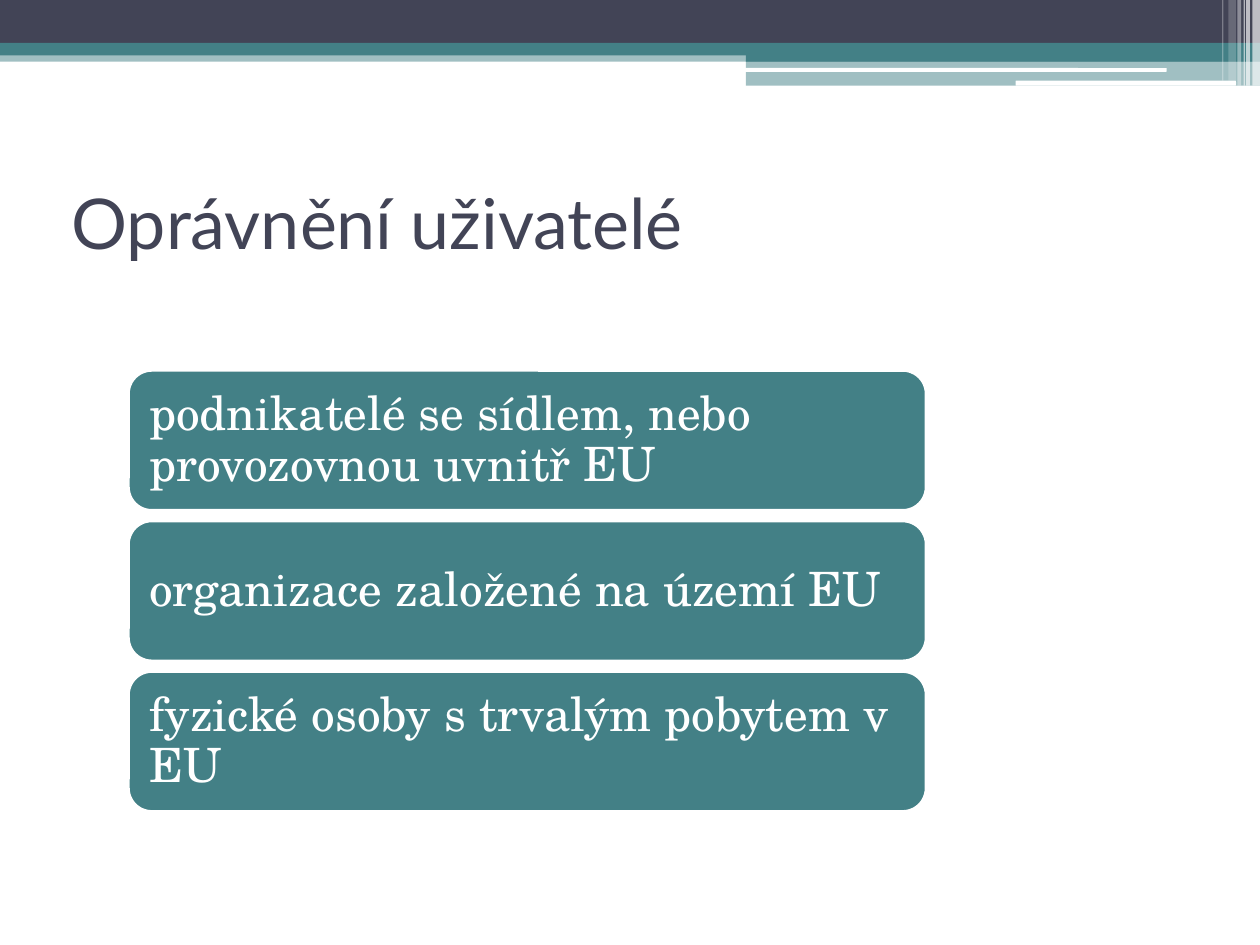
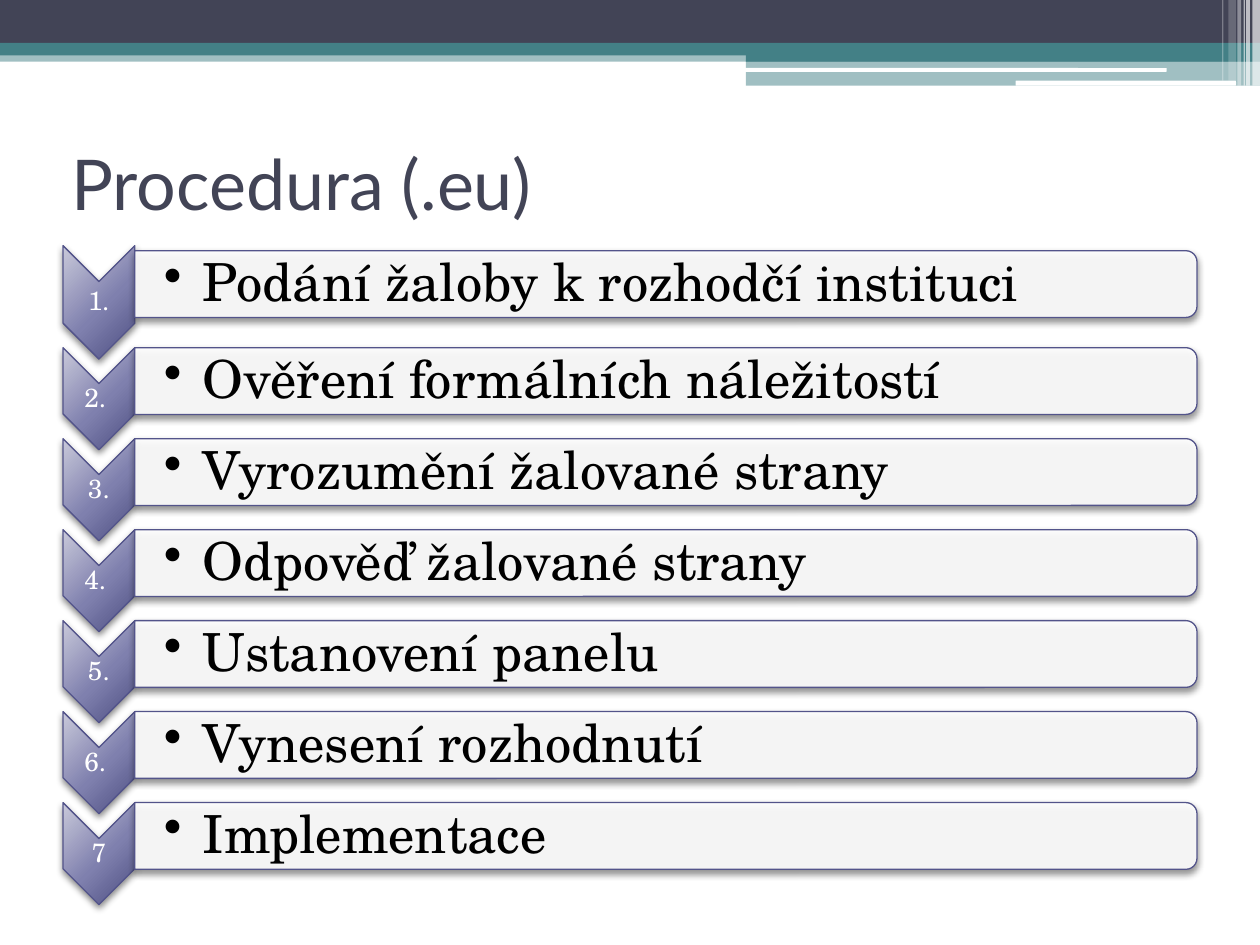
from dataclasses import dataclass

from pptx import Presentation
from pptx.dml.color import RGBColor
from pptx.enum.shapes import MSO_SHAPE
from pptx.enum.text import MSO_ANCHOR, PP_ALIGN
from pptx.oxml import parse_xml
from pptx.oxml.ns import nsdecls, qn
from pptx.util import Inches, Pt

# Content
USERS_TITLE = "Oprávnění uživatelé"
USERS = [
    "podnikatelé se sídlem, nebo provozovnou uvnitř EU",
    "organizace založené na území EU",
    "fyzické osoby s trvalým pobytem v EU",
]
STEPS_TITLE = "Procedura (.eu)"
STEPS = [
    ("1.", "Podání žaloby k rozhodčí instituci"),
    ("2. ", "Ověření formálních náležitostí"),
    ("3.", "Vyrozumění žalované strany"),
    ("4. ", "Odpověď žalované strany"),
    ("5.", "Ustanovení panelu"),
    ("6. ", "Vynesení rozhodnutí"),
    ("7", "Implementace"),
]


@dataclass(frozen=True)
class Theme:
    dark: str = "424456"
    teal: str = "438086"
    white: str = "FFFFFF"
    black: str = "000000"
    outline: str = "53548A"
    arrow_stops: tuple = ((0, "C9C9DA"), (55, "7F80AE"), (100, "4D4E81"))
    title_font: str = "Lato"
    body_font: str = "TeX Gyre Schola"
    title_size: int = 40
    user_size: int = 27
    step_size: int = 30
    number_size: int = 15


THEME = Theme()

# Header: left, top, width, height, colour, opacity in percent
HEADER_BANDS = [
    (0, 0.4, 10, 0.09, THEME.teal, 50),
    (0, 0, 10, 0.34, THEME.dark, 100),
    (0, 0.34, 10, 0.1, THEME.teal, 100),
    (5.92, 0.39, 4.08, 0.1, THEME.teal, 100),
    (5.92, 0.48, 4.08, 0.2, THEME.teal, 50),
]
HEADER_RULES = [(5.91, 0.54, 3.35, 0.03), (8.06, 0.64, 1.75, 0.04)]
# Stripes: left, width, height, opacity in percent
HEADER_STRIPES = [
    (9.94, 0.06, 0.68, 65),
    (9.89, 0.03, 0.68, 65),
    (9.87, 0.01, 0.68, 60),
    (9.82, 0.03, 0.68, 40),
    (9.75, 0.06, 0.64, 20),
    (9.7, 0.01, 0.64, 30),
]


def add_block(page, kind, left, top, width, height, color=None, opacity=100,
              line=None, line_width=0.75, turned=False):
    """Add a shape that covers the given area; turned shapes rotate by 90 degrees."""
    if turned:
        left, top = left + (width - height) / 2, top + (height - width) / 2
        width, height = height, width
    shape = page.shapes.add_shape(
        kind, Inches(left), Inches(top), Inches(width), Inches(height))
    shape.rotation = 90 if turned else 0
    shape.shadow.inherit = False
    if color:
        shape.fill.solid()
        shape.fill.fore_color.rgb = RGBColor.from_string(color)
    if opacity < 100:
        solid = shape.element.spPr.find(qn("a:solidFill"))
        solid[0].append(parse_xml(
            f'<a:alpha {nsdecls("a")} val="{opacity * 1000}"/>'))
    if line:
        shape.line.color.rgb = RGBColor.from_string(line)
        shape.line.width = Pt(line_width)
    else:
        shape.line.fill.background()
    return shape


def add_shadow(shape):
    shape.element.spPr.find(qn("a:effectLst")).append(parse_xml(
        f'<a:outerShdw {nsdecls("a")} blurRad="{Pt(4)}" dist="{Pt(2)}" '
        'dir="5400000" rotWithShape="0"><a:srgbClr val="000000">'
        '<a:alpha val="45000"/></a:srgbClr></a:outerShdw>'))


def add_arrow_gradient(shape):
    stops = "".join(
        f'<a:gs pos="{place * 1000}"><a:srgbClr val="{color}"/></a:gs>'
        for place, color in THEME.arrow_stops)
    shape.element.spPr.find(qn("a:prstGeom")).addnext(parse_xml(
        f'<a:gradFill {nsdecls("a")} rotWithShape="1"><a:gsLst>{stops}</a:gsLst>'
        '<a:path path="circle"><a:fillToRect l="-40000" t="-90000" '
        'r="140000" b="190000"/></a:path></a:gradFill>'))


def write(shape, text, size, color, font=THEME.body_font, align=PP_ALIGN.LEFT,
          insets=(0.1, 0.05, 0.1, 0.05), spacing=0.9, bullet_indent=0):
    frame = shape.text_frame
    frame.word_wrap = True
    frame.vertical_anchor = MSO_ANCHOR.MIDDLE
    (frame.margin_left, frame.margin_top,
     frame.margin_right, frame.margin_bottom) = map(Inches, insets)
    para = frame.paragraphs[0]
    para.alignment = align
    para.line_spacing = spacing
    if bullet_indent:
        settings = para._p.get_or_add_pPr()
        settings.set("marL", str(Inches(bullet_indent)))
        settings.set("indent", str(-Inches(bullet_indent)))
        settings.append(parse_xml(f'<a:buChar {nsdecls("a")} char="•"/>'))
    span = para.add_run()
    span.text = text
    span.font.name = font
    span.font.size = Pt(size)
    span.font.color.rgb = RGBColor.from_string(color)


def add_text(page, text, left, top, width, height, **text_format):
    box = page.shapes.add_textbox(
        Inches(left), Inches(top), Inches(width), Inches(height))
    write(box, text, **text_format)


def add_page(deck, title, title_top):
    """Start a page with the shared header and title."""
    page = deck.slides.add_slide(deck.slide_layouts[6])
    for left, top, width, height, color, opacity in HEADER_BANDS:
        add_block(page, MSO_SHAPE.RECTANGLE, left, top, width, height, color, opacity)
    for area in HEADER_RULES:
        add_block(page, MSO_SHAPE.ROUNDED_RECTANGLE, *area, THEME.white)
    for left, width, height, opacity in HEADER_STRIPES:
        add_block(page, MSO_SHAPE.RECTANGLE, left, 0, width, height,
                  THEME.white, opacity)
    add_text(page, title, 0.47, title_top, 9, 1.17, size=THEME.title_size,
             color=THEME.dark, font=THEME.title_font, spacing=1.0)
    return page


def add_users(page):
    first_top, last_top = 2.94, 5.33
    pitch = (last_top - first_top) / (len(USERS) - 1)
    for index, user in enumerate(USERS):
        card = add_block(page, MSO_SHAPE.ROUNDED_RECTANGLE,
                         1.02, first_top + index * pitch, 6.33, 1.11,
                         THEME.teal, line=THEME.white, line_width=1.5)
        write(card, user, THEME.user_size, THEME.white, insets=(0.11,) * 4)


def add_steps(page):
    arrow_left, arrow_width, bar_width, bar_height = 0.5, 0.57, 8.43, 0.53
    bar_left = arrow_left + arrow_width
    second_top, last_top = 2.76, 6.37
    pitch = (last_top - second_top) / (len(STEPS) - 2)
    for index, (number, step) in enumerate(STEPS):
        # The first arrow is taller and starts a little above its bar
        if index == 0:
            arrow_top, arrow_height, bar_top = 1.95, 0.9, 1.99
        else:
            arrow_top = bar_top = second_top + (index - 1) * pitch
            arrow_height = 0.81
        arrow = add_block(page, MSO_SHAPE.CHEVRON, arrow_left, arrow_top,
                          arrow_width, arrow_height, line=THEME.outline, turned=True)
        add_arrow_gradient(arrow)
        add_shadow(arrow)
        add_text(page, number, arrow_left, arrow_top + arrow_width / 2,
                 arrow_width, arrow_height - arrow_width, size=THEME.number_size,
                 color=THEME.white, align=PP_ALIGN.CENTER, insets=(0.01,) * 4)
        bar = add_block(page, MSO_SHAPE.ROUND_2_SAME_RECTANGLE, bar_left, bar_top,
                        bar_width, bar_height, THEME.white, 90,
                        line=THEME.outline, turned=True)
        add_shadow(bar)
        add_text(page, step, bar_left, bar_top + 0.03, 8.4, 0.48,
                 size=THEME.step_size, color=THEME.black,
                 insets=(0.23, 0.02, 0.02, 0.02), bullet_indent=0.31)


def main():
    deck = Presentation()
    deck.slide_width, deck.slide_height = Inches(10), Inches(7.5)
    add_users(add_page(deck, USERS_TITLE, title_top=1.17))
    add_steps(add_page(deck, STEPS_TITLE, title_top=0.86))
    deck.save("out.pptx")


if __name__ == "__main__":
    main()
